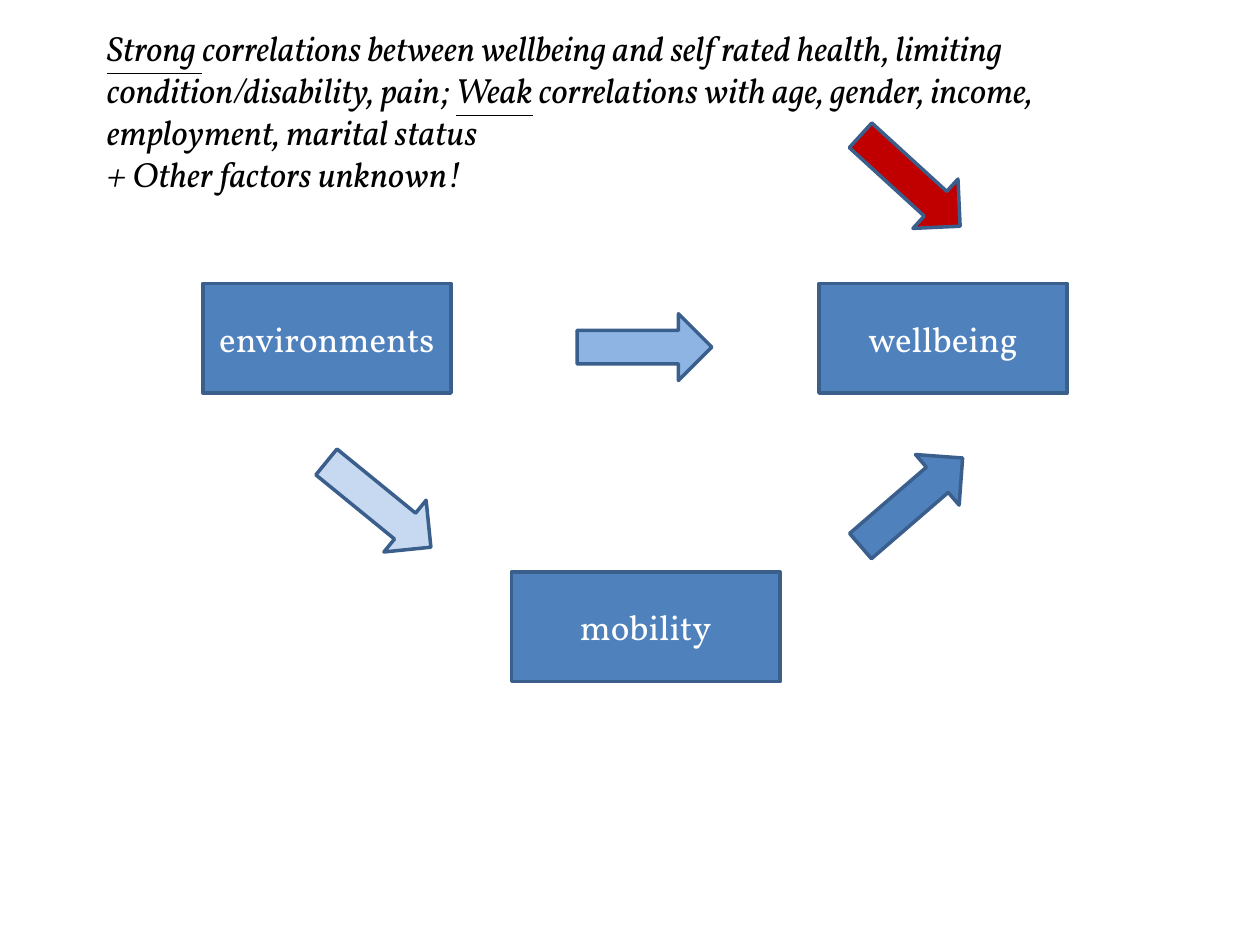
from pptx import Presentation
from pptx.dml.color import RGBColor
from pptx.enum.shapes import MSO_SHAPE as Shape
from pptx.enum.text import MSO_ANCHOR as Anchor, PP_ALIGN as Align
from pptx.util import Inches, Pt

FONT = "Vollkorn"
BLACK = RGBColor(0x00, 0x00, 0x00)
WHITE = RGBColor(0xFF, 0xFF, 0xFF)
BLUE = RGBColor(0x4F, 0x81, 0xBD)
MID_BLUE = RGBColor(0x8E, 0xB4, 0xE3)
PALE_BLUE = RGBColor(0xC6, 0xD9, 0xF1)
OUTLINE = RGBColor(0x3A, 0x5F, 0x8C)
RED = RGBColor(0xC0, 0x00, 0x00)

FINDINGS = [
    ("Strong ", True),
    ("correlations between wellbeing and self rated health, limiting "
     "condition/disability, pain; ", False),
    ("Weak", True),
    (" correlations with age, gender, income, employment, marital status ", False),
]
UNKNOWNS = "+ Other factors unknown!"

ROW_TOP, FACTOR_HEIGHT = 2.25, 0.87
FACTORS = [
    ("environments", 1.61, ROW_TOP, 1.97),
    ("wellbeing", 6.5, ROW_TOP, 1.97),
    ("mobility", 4.06, 4.54, 2.13),
]
ARROW_WIDTH, ARROW_HEIGHT = 1.07, 0.53
INFLUENCES = [
    (4.58, 2.49, 0, MID_BLUE),
    (2.47, 3.74, 39.2, PALE_BLUE),
    (6.7, 3.72, 319.2, BLUE),
    (6.69, 1.17, 42.4, RED),
]


def style_run(run, color):
    """Apply the slide's font and size with the given colour."""
    run.font.name = FONT
    run.font.size = Pt(20)
    run.font.color.rgb = color


def add_findings(slide, left, top, width, height):
    """Write the italic summary of correlations in the given box."""
    summary = slide.shapes.add_textbox(
        Inches(left), Inches(top), Inches(width), Inches(height))
    frame = summary.text_frame
    frame.word_wrap = True
    frame.vertical_anchor = Anchor.MIDDLE
    paragraph = frame.paragraphs[0]
    for text, underlined in FINDINGS + [(UNKNOWNS, False)]:
        if text == UNKNOWNS:
            paragraph.add_line_break()
        run = paragraph.add_run()
        run.text = text
        style_run(run, BLACK)
        run.font.italic = True
        run.font.underline = underlined


def add_outlined(slide, preset, left, top, width, height, fill):
    """Add a filled preset shape with the common outline."""
    shape = slide.shapes.add_shape(
        preset, Inches(left), Inches(top), Inches(width), Inches(height))
    shape.shadow.inherit = False
    shape.fill.solid()
    shape.fill.fore_color.rgb = fill
    shape.line.color.rgb = OUTLINE
    shape.line.width = Pt(2)
    return shape


def add_factor(slide, label, left, top, width, height):
    """Add one labelled factor of the model."""
    factor = add_outlined(
        slide, Shape.FLOWCHART_PROCESS, left, top, width, height, BLUE)
    frame = factor.text_frame
    frame.text = label
    frame.vertical_anchor = Anchor.MIDDLE
    frame.paragraphs[0].alignment = Align.CENTER
    style_run(frame.paragraphs[0].runs[0], WHITE)


def add_influence(slide, left, top, angle, fill):
    """Add one block arrow turned by the given angle."""
    arrow = add_outlined(
        slide, Shape.RIGHT_ARROW, left, top, ARROW_WIDTH, ARROW_HEIGHT, fill)
    arrow.rotation = angle


def main():
    """Build and save the wellbeing model slide."""
    deck = Presentation()
    deck.slide_width, deck.slide_height = Inches(10), Inches(7.5)
    slide = deck.slides.add_slide(deck.slide_layouts[6])
    add_findings(slide, 0.75, 0.21, 8.5, 1.34)
    for label, left, top, width in FACTORS:
        add_factor(slide, label, left, top, width, FACTOR_HEIGHT)
    for left, top, angle, fill in INFLUENCES:
        add_influence(slide, left, top, angle, fill)
    deck.save("out.pptx")


if __name__ == "__main__":
    main()
